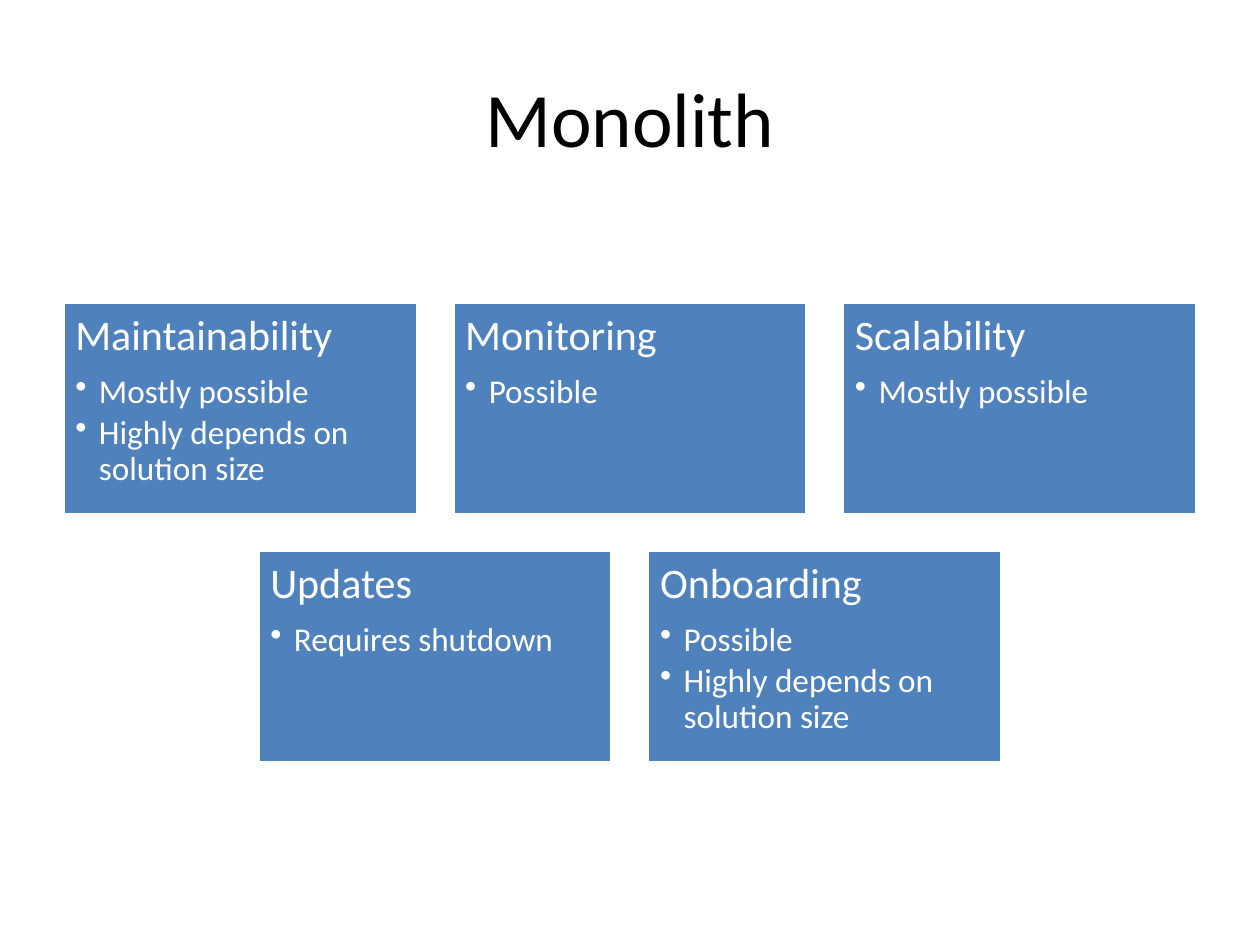
import pptx
import pptx.dml.color
import pptx.enum.shapes
import pptx.enum.text
import pptx.oxml
import pptx.oxml.ns
import pptx.util

Pt = pptx.util.Pt
ALIGN = pptx.enum.text.PP_ALIGN
ANCHOR = pptx.enum.text.MSO_ANCHOR

BLUE, WHITE, BLACK = "4F81BD", "FFFFFF", "000000"
COLUMNS = 3
GAP_RATIO = 0.1      # gap between cards, as a share of card width
HEIGHT_RATIO = 0.6   # card height, as a share of card width
TOPICS = [
    ("Maintainability", ["Mostly possible", "Highly depends on solution size"]),
    ("Monitoring", ["Possible"]),
    ("Scalability", ["Mostly possible"]),
    ("Updates", ["Requires shutdown"]),
    ("Onboarding", ["Possible", "Highly depends on solution size"]),
]


def color(value):
    return pptx.dml.color.RGBColor.from_string(value)


def add_bullet(paragraph, indent):
    properties = paragraph._p.get_or_add_pPr()
    properties.set("marL", str(Pt(indent)))
    properties.set("indent", str(-Pt(indent)))
    namespace = pptx.oxml.ns.nsdecls("a")
    properties.append(pptx.oxml.parse_xml(f'<a:buChar {namespace} char="•"/>'))


def write(paragraph, text, size, fill=WHITE, align=ALIGN.LEFT, spacing=0.9,
          after=0, bullet=False):
    paragraph.alignment = align
    paragraph.line_spacing = spacing
    paragraph.space_after = Pt(after)
    if bullet:
        paragraph.level = 1
        add_bullet(paragraph, 13.5)
    run = paragraph.add_run()
    run.text = text
    run.font.name = "Calibri"
    run.font.size = Pt(size)
    run.font.color.rgb = color(fill)


def add_title(slide, text, left, top, width, height):
    title = slide.shapes.add_textbox(Pt(left), Pt(top), Pt(width), Pt(height))
    frame = title.text_frame
    frame.word_wrap = True
    frame.vertical_anchor = ANCHOR.MIDDLE
    write(frame.paragraphs[0], text, 44, fill=BLACK, align=ALIGN.CENTER, spacing=1.0)


def add_card(slide, heading, points, left, top, width, height):
    card = slide.shapes.add_shape(pptx.enum.shapes.MSO_SHAPE.RECTANGLE,
                                  Pt(left), Pt(top), Pt(width), Pt(height))
    card.shadow.inherit = False
    card.fill.solid()
    card.fill.fore_color.rgb = color(BLUE)
    card.line.color.rgb = color(WHITE)
    card.line.width = Pt(2)
    frame = card.text_frame
    frame.word_wrap = True
    frame.vertical_anchor = ANCHOR.TOP
    frame.margin_left = frame.margin_right = Pt(7.2)
    frame.margin_top = frame.margin_bottom = Pt(7.2)
    write(frame.paragraphs[0], heading, 24, after=8.4)
    for point in points:
        write(frame.add_paragraph(), point, 19, after=2.85, bullet=True)


def add_card_grid(slide, topics, left, top, width, height):
    """Fill rows of cards, centring each row and the whole grid in the box."""
    card_width = width / (COLUMNS + (COLUMNS - 1) * GAP_RATIO)
    card_height = card_width * HEIGHT_RATIO
    gap = card_width * GAP_RATIO
    rows = [topics[i:i + COLUMNS] for i in range(0, len(topics), COLUMNS)]
    grid_height = len(rows) * (card_height + gap) - gap
    first_top = top + (height - grid_height) / 2
    for row_index, row in enumerate(rows):
        row_width = len(row) * (card_width + gap) - gap
        first_left = left + (width - row_width) / 2
        for column, (heading, points) in enumerate(row):
            add_card(slide, heading, points,
                     first_left + column * (card_width + gap),
                     first_top + row_index * (card_height + gap),
                     card_width, card_height)


def main():
    presentation = pptx.Presentation()
    presentation.slide_width = Pt(720)
    presentation.slide_height = Pt(540)
    slide = presentation.slides.add_slide(presentation.slide_layouts[6])
    add_title(slide, "Monolith", 36, 21.6, 648, 90)
    add_card_grid(slide, TOPICS, 36, 126, 648, 356.4)
    presentation.save("out.pptx")


if __name__ == "__main__":
    main()
